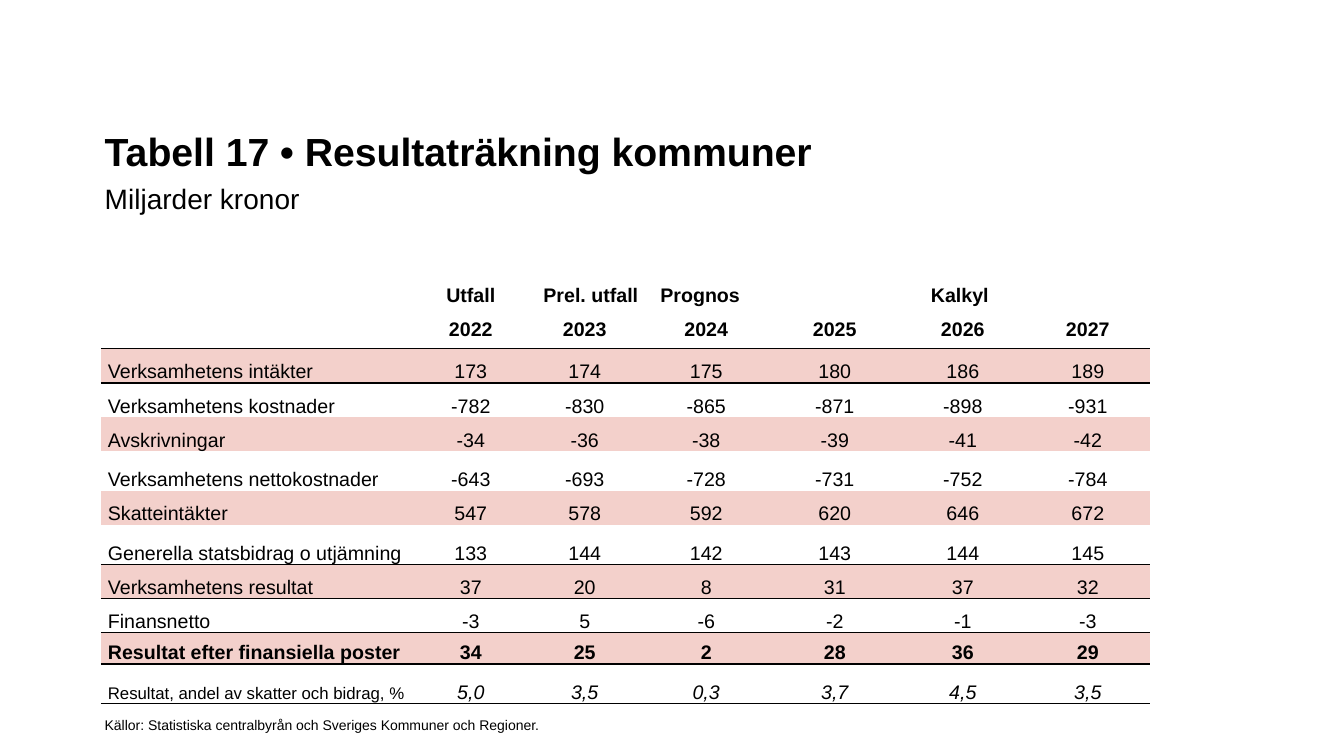
from lxml import etree
from pptx import Presentation
from pptx.dml.color import RGBColor
from pptx.enum.text import MSO_ANCHOR, PP_ALIGN
from pptx.oxml.ns import qn
from pptx.util import Inches, Pt

LEFT, CENTER = PP_ALIGN.LEFT, PP_ALIGN.CENTER
TOP, MIDDLE, BOTTOM = MSO_ANCHOR.TOP, MSO_ANCHOR.MIDDLE, MSO_ANCHOR.BOTTOM

TITLE = "Tabell 17 • Resultaträkning kommuner"
SUBTITLE = "Miljarder kronor"
SOURCE = "Källor: Statistiska centralbyrån och Sveriges Kommuner och Regioner."

PHASES = ["", "Utfall", "Prel. utfall\tPrognos", "", "Kalkyl", "", ""]
YEARS = ["", "2022", "2023", "2024", "2025", "2026", "2027"]
RESULTS = [
    ["Verksamhetens intäkter", "173", "174", "175", "180", "186", "189"],
    ["Verksamhetens kostnader", "-782", "-830", "-865", "-871", "-898", "-931"],
    ["Avskrivningar", "-34", "-36", "-38", "-39", "-41", "-42"],
    ["Verksamhetens nettokostnader", "-643", "-693", "-728", "-731", "-752", "-784"],
    ["Skatteintäkter", "547", "578", "592", "620", "646", "672"],
    ["Generella statsbidrag o utjämning", "133", "144", "142", "143", "144", "145"],
    ["Verksamhetens resultat", "37", "20", "8", "31", "37", "32"],
    ["Finansnetto", "-3", "5", "-6", "-2", "-1", "-3"],
    ["Resultat efter finansiella poster", "34", "25", "2", "28", "36", "29"],
    ["Resultat, andel av skatter och bidrag, %", "5,0", "3,5", "0,3", "3,7", "4,5", "3,5"],
]
ROWS = [PHASES, YEARS] + RESULTS
HEADER_ROWS = 2
TOTAL_ROW, SHARE_ROW = 10, 11
RULED_ROWS = {1, 7, 8, 9, 10, 11}  # rows with a line below
PHASE_SPANS = [(2, 3), (4, 6)]
SPLIT_PHASE = (0, 2)  # cell that holds two phase names, set with a tab

COLUMN_WIDTHS = [3.12, 1.1, 1.16, 1.25, 1.3, 1.24, 1.24]
ROW_HEIGHT = 0.34
OTHER_HEIGHTS = {5: 0.39, 7: 0.39, 10: 0.31, 11: 0.39}
CELL_INSET = 0.07
SPLIT_INSET, SPLIT_TAB = 0.17, 1.16
NO_STYLE = "{2D5ABB26-0587-4C30-8999-92F81FD0307C}"

THEME = {
    "font": "Arial",
    "ink": "000000",
    "band": "F3D0CB",
    "title": 28,
    "subtitle": 20,
    "body": 14,
    "share": 12,
    "source": 10,
    "rule": 1,
}


def add_span(para, text, size, **formats):
    span = para.add_run()
    span.text = text
    values = {"name": THEME["font"], "size": Pt(THEME[size]), **formats}
    for name, value in values.items():
        setattr(span.font, name, value)
    span.font.color.rgb = RGBColor.from_string(THEME["ink"])


def add_box(page, left, top, width, height, anchor):
    frame = page.shapes.add_textbox(*map(Inches, (left, top, width, height))).text_frame
    frame.word_wrap = True
    frame.vertical_anchor = anchor
    return frame.paragraphs[0]


def add_rule(cell, side):
    line = etree.SubElement(cell._tc.get_or_add_tcPr(), qn(f"a:{side}"),
                            w=str(Pt(THEME["rule"])))
    fill = etree.SubElement(line, qn("a:solidFill"))
    etree.SubElement(fill, qn("a:srgbClr"), val=THEME["ink"])


def add_tab_stop(para, position):
    stops = etree.SubElement(para._p.get_or_add_pPr(), qn("a:tabLst"))
    etree.SubElement(stops, qn("a:tab"), pos=str(Inches(position)), algn="l")


def fill_cell(cell, row, column, text):
    is_header = row < HEADER_ROWS
    is_split = (row, column) == SPLIT_PHASE
    layout = {
        "margin_left": Inches(SPLIT_INSET if is_split else CELL_INSET),
        "margin_right": Inches(CELL_INSET),
        "margin_top": 0,
        "margin_bottom": 0,
        "vertical_anchor": MIDDLE if is_header else BOTTOM,
    }
    for name, value in layout.items():
        setattr(cell, name, value)

    if row - 1 in RULED_ROWS:
        add_rule(cell, "lnT")
    if row in RULED_ROWS:
        add_rule(cell, "lnB")
    if not is_header and row % 2 == 0:
        cell.fill.solid()
        cell.fill.fore_color.rgb = RGBColor.from_string(THEME["band"])
    else:
        cell.fill.background()

    para = cell.text_frame.paragraphs[0]
    para.alignment = LEFT if column == 0 or is_split else CENTER
    para.line_spacing = Pt(13)
    para.space_after = Pt(1)
    if is_split:
        add_tab_stop(para, SPLIT_TAB)
    if text:
        is_share = row == SHARE_ROW
        add_span(para, text, "share" if is_share and column == 0 else "body",
                 bold=is_header or row == TOTAL_ROW,
                 italic=is_share and column > 0)


def add_results_table(page):
    heights = [OTHER_HEIGHTS.get(row, ROW_HEIGHT) for row in range(len(ROWS))]
    table = page.shapes.add_table(
        len(ROWS), len(COLUMN_WIDTHS), Inches(1), Inches(2.78),
        Inches(sum(COLUMN_WIDTHS)), Inches(sum(heights))).table
    table.first_row = table.horz_banding = False
    table._tbl.tblPr.find(qn("a:tableStyleId")).text = NO_STYLE
    for column, width in zip(table.columns, COLUMN_WIDTHS):
        column.width = Inches(width)
    for row, height in zip(table.rows, heights):
        row.height = Inches(height)
    for first, last in PHASE_SPANS:
        table.cell(0, first).merge(table.cell(0, last))
    for row, texts in enumerate(ROWS):
        for column, text in enumerate(texts):
            fill_cell(table.cell(row, column), row, column, text)


def main():
    deck = Presentation()
    deck.slide_width, deck.slide_height = Inches(13.33), Inches(7.5)
    page = deck.slides.add_slide(deck.slide_layouts[6])

    heading = add_box(page, 0.94, 0.83, 11.05, 1.35, BOTTOM)
    heading.line_spacing = 1.2
    heading.space_after = Pt(4)
    add_span(heading, TITLE, "title", bold=True)
    heading.add_line_break()
    add_span(heading, SUBTITLE, "subtitle", bold=False)

    add_results_table(page)
    add_span(add_box(page, 0.94, 7.06, 6.67, 0.27, TOP), SOURCE, "source")
    deck.save("out.pptx")


if __name__ == "__main__":
    main()
